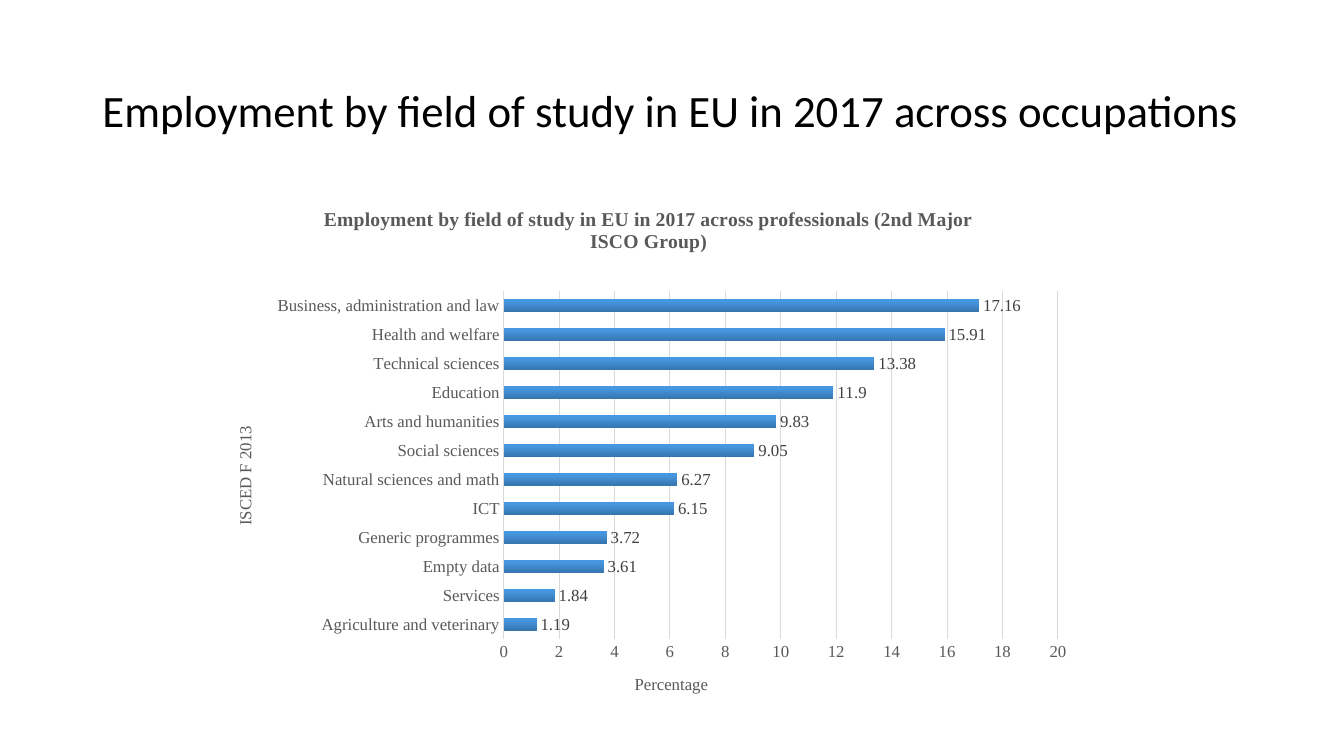
import pptx
import pptx.chart.data
import pptx.dml.color
import pptx.enum.chart
import pptx.enum.text
import pptx.oxml
import pptx.oxml.ns
import pptx.util
from dataclasses import dataclass

NS = pptx.oxml.ns.nsdecls("a", "c")
CHART = pptx.enum.chart
TEXT = pptx.enum.text
COLS, ROWS = 160, 150


@dataclass
class Theme:
    """Colours, fonts and type sizes of the slide."""
    head: str = "Calibri"
    body: str = "Times New Roman"
    ink: str = "000000"
    text: str = "595959"
    label: str = "404040"
    grid: str = "D9D9D9"
    bar: tuple = ((0, "3674AD"), (80, "4697E0"), (100, "4498E4"))
    big: int = 32
    mid: int = 14
    small: int = 12


def assign(item, values):
    """Set each named attribute on an item."""
    for name, value in values.items():
        setattr(item, name, value)


def color(code):
    """Turn a hex code into a colour."""
    return pptx.dml.color.RGBColor.from_string(code)


class Deck:
    """Hold the theme and the current slide."""

    def __init__(self, theme):
        """Start a wide deck with one titled slide."""
        self.theme = theme
        self.file = pptx.Presentation()
        high = pptx.util.Inches(7.5)
        assign(self.file, {"slide_width": high * 16 // 9,
                           "slide_height": high})
        self.slide = self.file.slides.add_slide(self.file.slide_layouts[5])

    def box(self, x, y, w, h):
        """Turn columns and rows of the grid into lengths."""
        col = self.file.slide_width / COLS
        row = self.file.slide_height / ROWS
        return {"left": int(x * col), "top": int(y * row),
                "width": int(w * col), "height": int(h * row)}

    def font(self, font, size, code, face=None, bold=False):
        """Style a font."""
        assign(font, {"name": face or self.theme.body, "bold": bold,
                      "size": pptx.util.Pt(size)})
        font.color.rgb = color(code)

    def line(self, form, width):
        """Style a chart line in the grid colour."""
        form.line.width = pptx.util.Pt(width)
        form.line.color.rgb = color(self.theme.grid)

    def title(self, text, cells):
        """Fill and place the title placeholder."""
        shape = self.slide.shapes.title
        assign(shape, self.box(*cells))
        frame = shape.text_frame
        frame.text = text
        assign(frame, {"word_wrap": True,
                       "auto_size": TEXT.MSO_AUTO_SIZE.NONE,
                       "vertical_anchor": TEXT.MSO_ANCHOR.MIDDLE})
        para = frame.paragraphs[0]
        assign(para, {"alignment": TEXT.PP_ALIGN.LEFT, "line_spacing": 0.9})
        self.font(para.runs[0].font, self.theme.big, self.theme.ink,
                  self.theme.head)

    def place(self, node, index, inner=False, **share):
        """Give a chart part a fixed place in percent of the chart."""
        for old in node.findall(pptx.oxml.ns.qn("c:layout")):
            node.remove(old)
        target = '<c:layoutTarget val="inner"/>' if inner else ""
        modes = "".join(f'<c:{key}Mode val="edge"/>' for key in "xy")
        spots = "".join(f'<c:{key} val="{val / 100:.4f}"/>'
                        for key, val in share.items())
        node.insert(index, pptx.oxml.parse_xml(
            f"<c:layout {NS}><c:manualLayout>{target}{modes}{spots}"
            "</c:manualLayout></c:layout>"))

    def caption(self, part, text, size, x, y, bold=False, turn=0):
        """Write and place a chart or axis title."""
        frame = part.text_frame
        frame.text = text
        frame._txBody.bodyPr.set("rot", str(turn * 60000))
        self.font(frame.paragraphs[0].runs[0].font, size, self.theme.text,
                  bold=bold)
        self.place(part._element, 1, x=x, y=y)

    def axis(self, axis, text, x, y, turn=0):
        """Style an axis and its title."""
        none = CHART.XL_TICK_MARK.NONE
        assign(axis, {"major_tick_mark": none, "minor_tick_mark": none})
        self.font(axis.tick_labels.font, self.theme.small, self.theme.text)
        self.caption(axis.axis_title, text, self.theme.small, x, y, turn=turn)

    def shade(self, series):
        """Fill bars with the theme's upward gradient."""
        stops = "".join(
            f'<a:gs pos="{pos * 1000}"><a:srgbClr val="{code}"/></a:gs>'
            for pos, code in self.theme.bar)
        series.format.fill.background()
        props = series._element.spPr
        old = props.find(pptx.oxml.ns.qn("a:noFill"))
        props.replace(old, pptx.oxml.parse_xml(
            f"<a:gradFill {NS}><a:gsLst>{stops}</a:gsLst>"
            '<a:lin ang="16200000" scaled="0"/></a:gradFill>'))

    def bars(self, head, rows, names, cells):
        """Add a bar chart with labelled bars."""
        data = pptx.chart.data.CategoryChartData()
        data.categories = [name for name, _ in rows]
        data.add_series("Series 1", [value for _, value in rows])
        chart = self.slide.shapes.add_chart(
            CHART.XL_CHART_TYPE.BAR_CLUSTERED, *self.box(*cells).values(),
            data).chart
        chart.has_legend = False
        self.font(chart.font, self.theme.small, self.theme.ink)
        self.caption(chart.chart_title, head, self.theme.mid, 12.2, 3.1,
                     bold=True)

        cat, val = chart.category_axis, chart.value_axis
        self.axis(cat, names[0], 2, 44.7, turn=-90)
        self.axis(val, names[1], 48, 91.6)
        self.line(cat.format, 1)
        assign(val, {"minimum_scale": 0, "maximum_scale": 20, "major_unit": 2})
        val.format.line.fill.background()
        self.line(val.major_gridlines.format, 0.75)

        plot = chart.plots[0]
        assign(plot, {"gap_width": 115, "overlap": -20,
                      "vary_by_categories": False, "has_data_labels": True})
        assign(plot.data_labels, {
            "show_value": True, "number_format": "General",
            "number_format_is_linked": False,
            "position": CHART.XL_LABEL_POSITION.OUTSIDE_END})
        self.font(plot.data_labels.font, self.theme.small, self.theme.label)
        self.shade(plot.series[0])
        area = chart._chartSpace.chart.plotArea
        self.place(area, 0, inner=True, x=33.3, y=19.75, w=63.75, h=65.75)


def main():
    """Build and save the slide."""
    deck = Deck(Theme())
    deck.title("Employment by field of study in EU in 2017 across occupations",
               (11, 8, 138, 29))
    rows = [
        ("Agriculture and veterinary", 1.19),
        ("Services", 1.84),
        ("Empty data", 3.61),
        ("Generic programmes", 3.72),
        ("ICT", 6.15),
        ("Natural sciences and math", 6.27),
        ("Social sciences", 9.05),
        ("Arts and humanities", 9.83),
        ("Education", 11.9),
        ("Technical sciences", 13.38),
        ("Health and welfare", 15.91),
        ("Business, administration and law", 17.16),
    ]
    deck.bars("Employment by field of study in EU in 2017 across "
              "professionals (2nd Major ISCO Group)",
              rows, ("ISCED F 2013", "Percentage"), (25.5, 37, 103.5, 105))
    deck.file.save("out.pptx")


if __name__ == "__main__":
    main()
